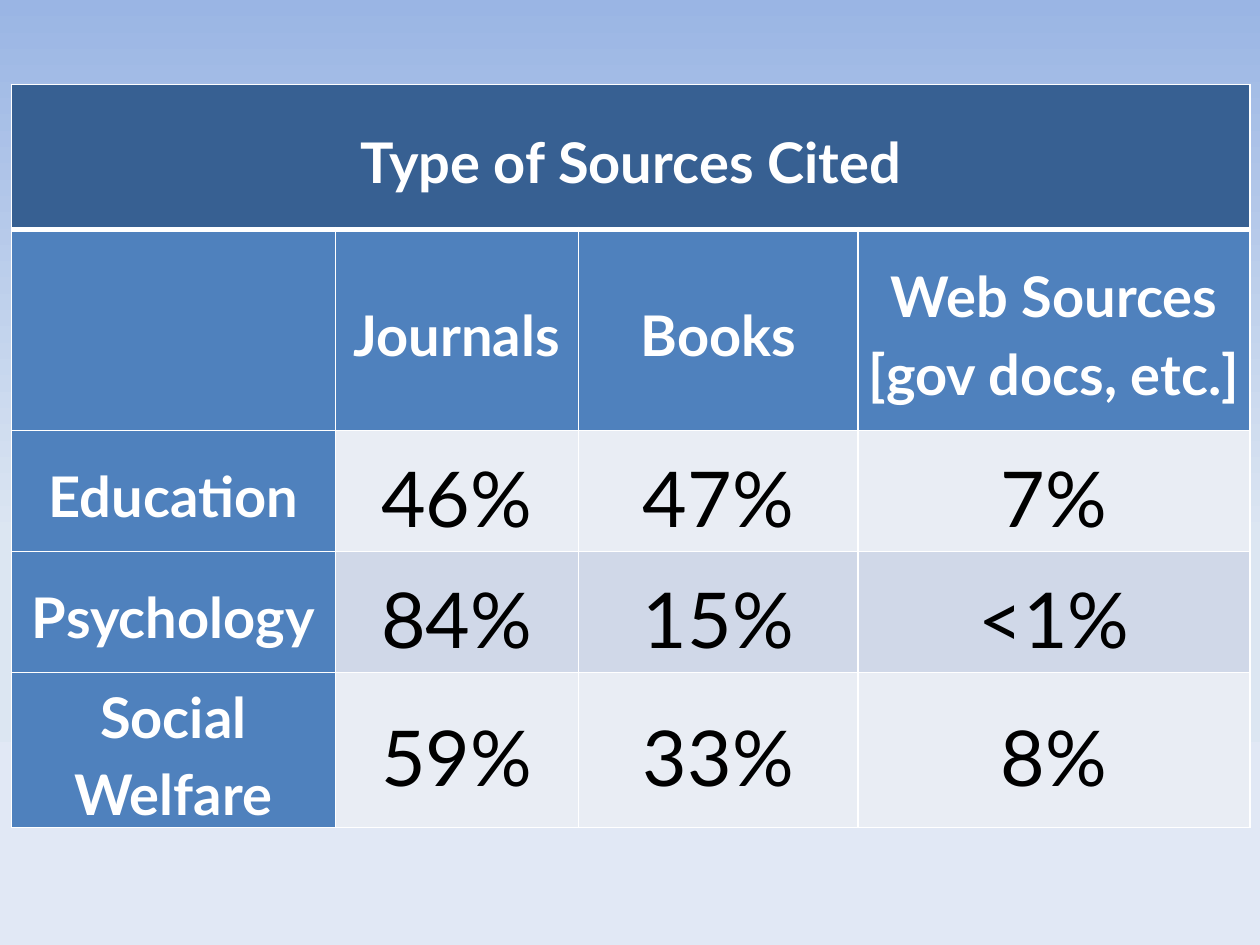
"""Build a slide with a table of the types of sources cited by field."""
import copy

from lxml import etree
from pptx import Presentation
from pptx import util as u
from pptx.dml import color
from pptx.enum import text
from pptx.oxml import ns

TITLE = "Type of Sources Cited"
ROWS = [
    (TITLE, "", "", ""),
    ("", "Journals", "Books", "Web Sources [gov docs, etc.]"),
    ("Education", "46%", "47%", "7%"),
    ("Psychology", "84%", "15%", "<1%"),
    ("Social Welfare", "59%", "33%", "8%"),
]
COL_WIDTHS = [6.53, 4.9, 5.64, 7.9]
ROW_HEIGHTS = [2.92, 4.06, 2.44, 2.44, 3.0]
LEFT, TOP = 0.23, 1.7
COLORS = {"title": "376092", "head": "4F81BD", "odd": "E9EDF4",
          "even": "D0D8E8", "white": "FFFFFF", "black": "000000"}
BACKGROUND = [(0, "9AB5E4"), (0.57, "DCE6F2"), (1, "E1E8F5")]


def rgb(name):
    return color.RGBColor.from_string(COLORS[name])


def set_background(s):
    fill = s.background.fill
    fill.gradient()
    fill.gradient_angle = 270
    first = next(s.element.iter(ns.qn("a:gs")))
    first.addnext(copy.deepcopy(first))
    for stop, (position, value) in zip(fill.gradient_stops, BACKGROUND):
        stop.color.rgb = color.RGBColor.from_string(value)
        stop.position = position


def set_borders(cell, **widths):
    tcPr = cell._tc.get_or_add_tcPr()
    for side in "LRTB":
        ln = etree.SubElement(tcPr, ns.qn(f"a:ln{side}"),
                              w=str(u.Pt(widths.get(side, 1))))
        fill = etree.SubElement(ln, ns.qn("a:solidFill"))
        etree.SubElement(fill, ns.qn("a:srgbClr"), val=COLORS["white"])


def write(cell, words, size=32, bold=True, ink="white"):
    cell.vertical_anchor = text.MSO_ANCHOR.MIDDLE
    cell.margin_left = cell.margin_right = u.Cm(0.18)
    cell.margin_top = cell.margin_bottom = 0
    p = cell.text_frame.paragraphs[0]
    p.alignment = text.PP_ALIGN.CENTER
    p.line_spacing = 1.15
    r = p.add_run()
    r.text = words
    r.font.name = "Lato"
    r.font.size = u.Pt(size)
    r.font.bold = bold
    r.font.color.rgb = rgb(ink)


def add_sources_table(s):
    frame = s.shapes.add_table(
        len(ROWS), len(COL_WIDTHS), u.Cm(LEFT), u.Cm(TOP),
        u.Cm(sum(COL_WIDTHS)), u.Cm(sum(ROW_HEIGHTS)))
    table = frame.table
    for column, width in zip(table.columns, COL_WIDTHS):
        column.width = u.Cm(width)
    for row, height in zip(table.rows, ROW_HEIGHTS):
        row.height = u.Cm(height)
    table.cell(0, 0).merge(table.cell(0, len(COL_WIDTHS) - 1))
    for i, row in enumerate(ROWS):
        for j, words in enumerate(row):
            cell = table.cell(i, j)
            is_value = i > 1 and j > 0
            set_borders(cell, T=3 if i == 1 else 1, B=3 if i == 0 else 1)
            if is_value:
                shade = "even" if i % 2 else "odd"
            else:
                shade = "head" if i else "title"
            cell.fill.solid()
            cell.fill.fore_color.rgb = rgb(shade)
            if is_value:
                write(cell, words, size=44, bold=False, ink="black")
            elif words:
                write(cell, words)


def main():
    prs = Presentation()
    prs.slide_width, prs.slide_height = u.Cm(25.4), u.Cm(19.05)
    s = prs.slides.add_slide(prs.slide_layouts[6])
    set_background(s)
    add_sources_table(s)
    prs.save("out.pptx")


if __name__ == "__main__":
    main()
